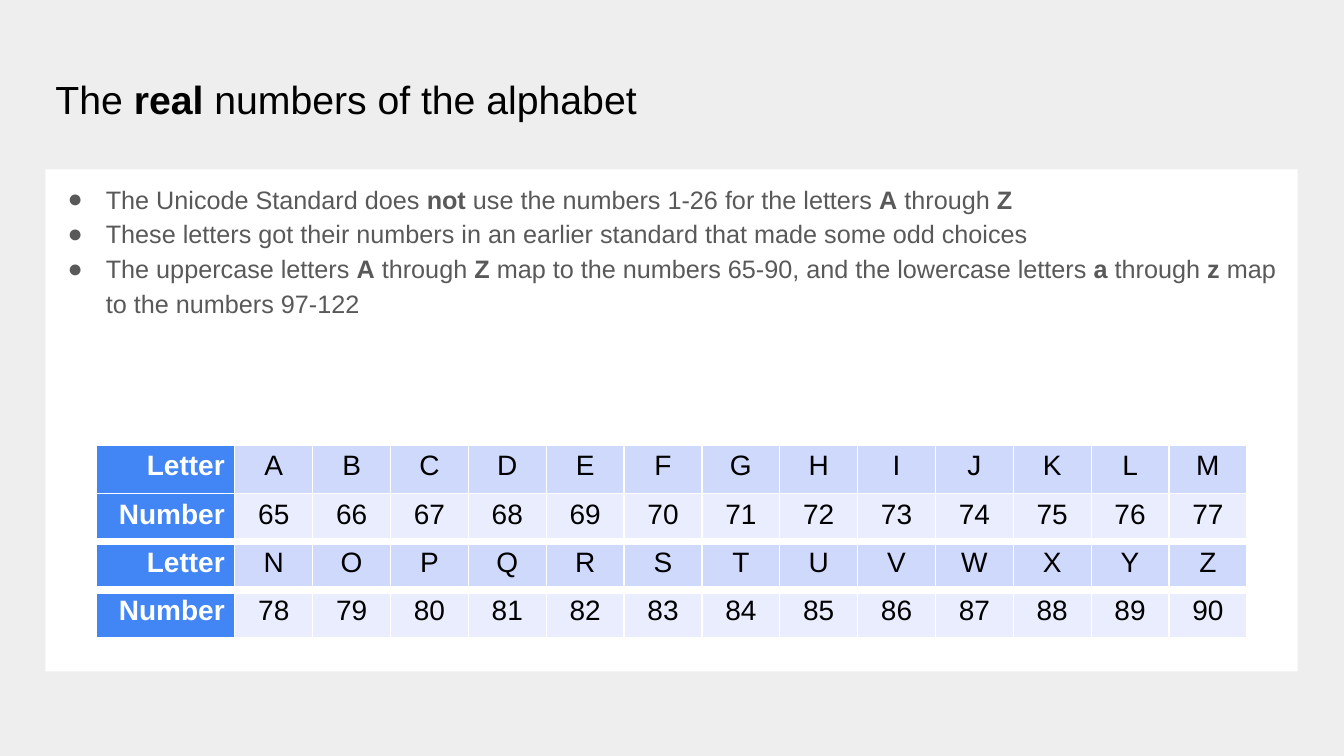
from lxml import etree
from pptx import Presentation
from pptx.dml.color import RGBColor as RGB
from pptx.enum.text import MSO_ANCHOR as Anchor, MSO_AUTO_SIZE as Fit, PP_ALIGN as Align
from pptx.oxml.ns import qn
from pptx.util import Inches, Pt

BACK = RGB(0xEE, 0xEE, 0xEE)
WHITE = RGB(0xFF, 0xFF, 0xFF)
BLACK = RGB(0, 0, 0)
GRAY = RGB(0x59, 0x59, 0x59)
BLUE = RGB(0x42, 0x85, 0xF4)
LIGHT = RGB(0xCF, 0xD9, 0xFB)
PALE = RGB(0xE9, 0xED, 0xFD)

TITLE = "The *real* numbers of the alphabet"
POINTS = [
    "The Unicode Standard does *not* use the numbers 1-26 for the letters *A* through *Z*",
    "These letters got their numbers in an earlier standard that made some odd choices",
    "The uppercase letters *A* through *Z* map to the numbers 65-90, "
    "and the lowercase letters *a* through *z* map to the numbers 97-122",
]
HALVES = ["ABCDEFGHIJKLM", "NOPQRSTUVWXYZ"]


def write(para, text, size=18, color=BLACK, align=Align.LEFT, line=1.0):
    """Fill a paragraph; words between asterisks become bold."""
    para.alignment = align
    para.line_spacing = line
    para.space_before = para.space_after = Pt(0)
    for i, part in enumerate(text.split("*")):
        if part:
            run = para.add_run()
            run.text = part
            font = run.font
            font.name, font.size, font.bold = "Arial", Pt(size), i % 2 == 1
            font.color.rgb = color


def place(shape, left, top, width, height):
    """Move a placeholder and give its text frame even insets."""
    shape.left, shape.top = Inches(left), Inches(top)
    shape.width, shape.height = Inches(width), Inches(height)
    frame = shape.text_frame
    frame.word_wrap, frame.auto_size = True, Fit.NONE
    frame.vertical_anchor = Anchor.TOP
    frame.margin_left = frame.margin_right = Inches(0.1)
    frame.margin_top = frame.margin_bottom = Inches(0.1)
    return frame


def bullet(para, color):
    props = para._p.get_or_add_pPr()
    props.set("marL", str(Inches(0.5)))
    props.set("indent", str(Inches(-0.38)))
    tint = etree.SubElement(props, qn("a:buClr"))
    etree.SubElement(tint, qn("a:srgbClr"), val=str(color))
    etree.SubElement(props, qn("a:buFont"), typeface="Arial")
    etree.SubElement(props, qn("a:buChar"), char="●")


def border(cell, **widths):
    """Draw white cell edges, one width in points for each side."""
    props = cell._tc.get_or_add_tcPr()
    for i, side in enumerate("LRTB"):
        edge = etree.Element(qn("a:ln" + side), w=str(Pt(widths.get(side, 1))))
        fill = etree.SubElement(edge, qn("a:solidFill"))
        etree.SubElement(fill, qn("a:srgbClr"), val=str(WHITE))
        props.insert(i, edge)


def add_list(shape, points):
    frame = place(shape, 0.45, 1.68, 12.42, 4.98)
    shape.fill.solid()
    shape.fill.fore_color.rgb = WHITE
    for i, text in enumerate(points):
        para = frame.add_paragraph() if i else frame.paragraphs[0]
        write(para, text, color=GRAY, line=1.15)
        bullet(para, GRAY)


def add_codes(slide):
    rows = []
    for half in HALVES:
        rows.append(["*Letter*", *half])
        rows.append(["*Number*", *(str(ord(c)) for c in half)])
    count = len(rows[0])
    table = slide.shapes.add_table(
        len(rows), count, Inches(0.96), Inches(4.42), Inches(11.41), Inches(1.91)
    ).table
    for c, col in enumerate(table.columns):
        col.width = Inches(1.37) if c == 0 else Inches((11.41 - 1.37) / (count - 1))
    for r, row in enumerate(rows):
        for c, text in enumerate(row):
            cell = table.cell(r, c)
            head = c == 0
            cell.fill.solid()
            cell.fill.fore_color.rgb = BLUE if head else (LIGHT, PALE)[r % 2]
            write(cell.text_frame.paragraphs[0], text, size=20,
                  color=WHITE if head else BLACK,
                  align=Align.RIGHT if head else Align.CENTER)
            # Wide gaps set off the third row
            border(cell, T=6 if r in (2, 3) else 1, B=6 if r in (1, 2) else 1)


def main():
    deck = Presentation()
    deck.slide_width, deck.slide_height = Inches(13.33), Inches(7.5)
    slide = deck.slides.add_slide(deck.slide_layouts[1])
    slide.background.fill.solid()
    slide.background.fill.fore_color.rgb = BACK

    # Title and list
    title = place(slide.shapes.title, 0.45, 0.65, 12.42, 0.84)
    write(title.paragraphs[0], TITLE, size=28)
    add_list(slide.placeholders[1], POINTS)

    # Letter codes
    add_codes(slide)
    deck.save("out.pptx")


if __name__ == "__main__":
    main()
